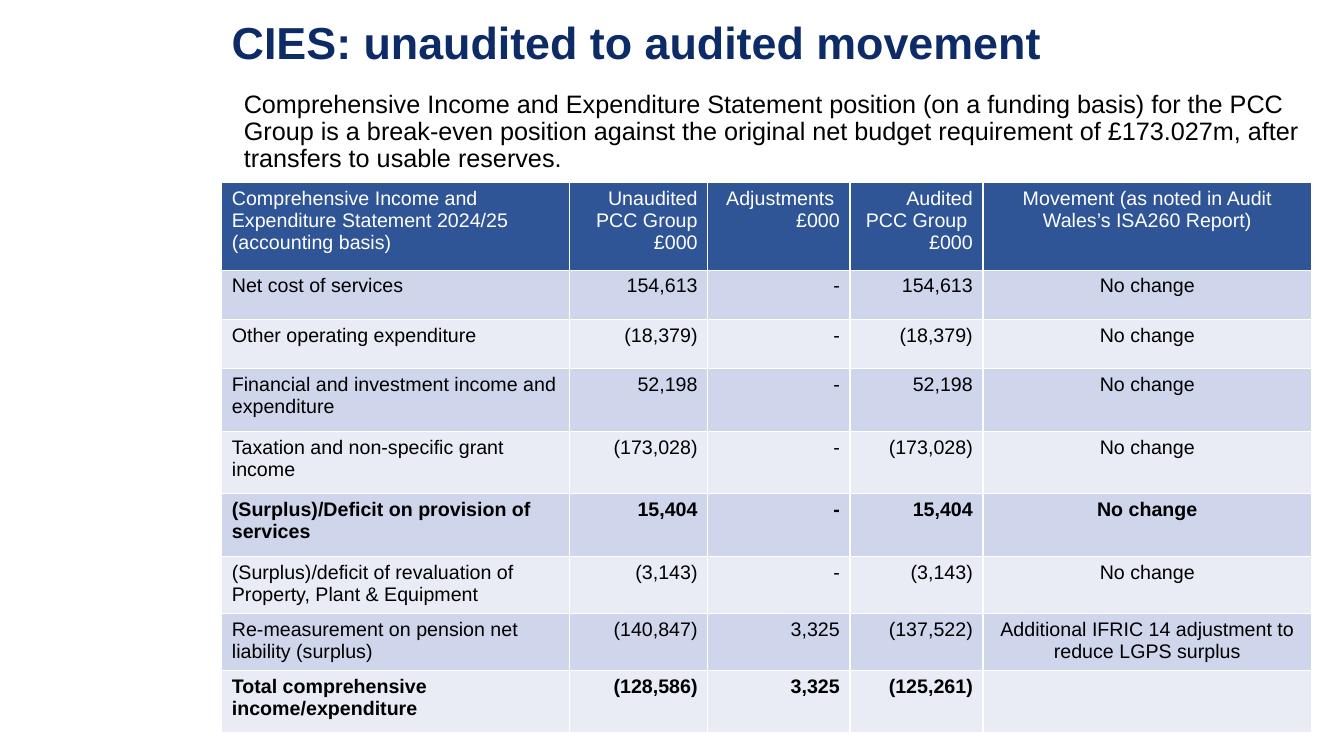
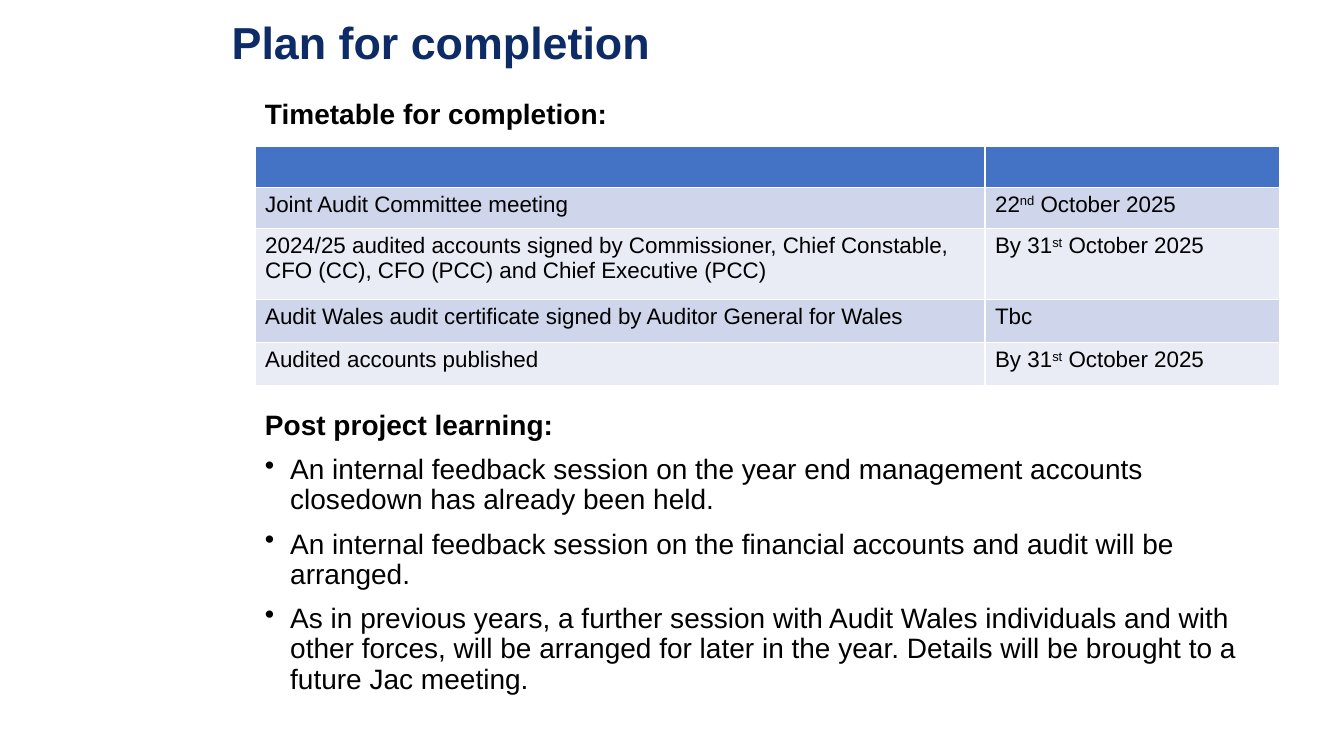
import itertools
from dataclasses import dataclass

import pptx
import pptx.dml.color
import pptx.enum.text
import pptx.oxml.ns
import pptx.util
from lxml import etree

Inches = pptx.util.Inches
Align = pptx.enum.text.PP_ALIGN
Anchor = pptx.enum.text.MSO_ANCHOR


@dataclass(frozen=True)
class Theme:
    font: str = "Arial"
    navy: str = "0D2B67"
    black: str = "000000"
    white: str = "FFFFFF"
    dark_header: str = "2F5597"
    bright_header: str = "4472C4"
    bands: tuple = ("CFD5EA", "E9EBF5")
    title_size: int = 32
    body_size: int = 20
    intro_size: int = 18
    schedule_size: int = 16
    figures_size: int = 14


THEME = Theme()
TITLE_BOX = (2.2, 0.13, 11.03, 0.64)

MOVEMENT_HEADER = (
    "Comprehensive Income and Expenditure Statement 2024/25\n(accounting basis)",
    "Unaudited PCC Group\n£000",
    "Adjustments \n£000",
    "Audited PCC Group \n£000",
    "Movement (as noted in Audit Wales’s ISA260 Report)",
)
MOVEMENT_ROWS = (
    ("Net cost of services", "154,613", "-", "154,613", "No change"),
    ("Other operating expenditure", "(18,379)", "-", "(18,379)", "No change"),
    ("Financial and investment income and expenditure", "52,198", "-", "52,198", "No change"),
    ("Taxation and non-specific grant income", "(173,028)", "-", "(173,028)", "No change"),
    ("(Surplus)/Deficit on provision of services", "15,404", "-", "15,404", "No change"),
    ("(Surplus)/deficit of revaluation of Property, Plant & Equipment",
     "(3,143)", "-", "(3,143)", "No change"),
    ("Re-measurement on pension net liability (surplus)", "(140,847)", "3,325", "(137,522)",
     "Additional IFRIC 14 adjustment to reduce LGPS surplus"),
    ("Total comprehensive income/expenditure", "(128,586)", "3,325", "(125,261)", ""),
)
SCHEDULE_ROWS = (
    ("Joint Audit Committee meeting", "22^nd^ October 2025"),
    ("2024/25 audited accounts signed by Commissioner, Chief Constable, "
     "CFO (CC), CFO (PCC) and Chief Executive (PCC)", "By 31^st^ October 2025"),
    ("Audit Wales audit certificate signed by Auditor General for Wales", "Tbc"),
    ("Audited accounts published", "By 31^st^ October 2025"),
)
LEARNING_POINTS = (
    "An internal feedback session on the year end management accounts closedown "
    "has already been held.",
    "An internal feedback session on the financial accounts and audit will be arranged.",
    "As in previous years, a further session with Audit Wales individuals and with other "
    "forces, will be arranged for later in the year. Details will be brought to a future "
    "Jac meeting.",
)


def rgb(value):
    return pptx.dml.color.RGBColor.from_string(value)


def write(frame, text, size, color=THEME.black, bold=False, align=Align.LEFT,
          line_spacing=None, space_before=0, indent=0, bullet=False):
    """Append one paragraph per line of text; ^marks^ enclose superscript."""
    for line in text.split("\n"):
        first = frame.paragraphs[0]
        is_first = not first.runs
        para = first if is_first else frame.add_paragraph()
        properties = para._p.get_or_add_pPr()
        if indent:
            properties.set("marL", str(Inches(indent)))
        if bullet:
            properties.set("indent", str(-Inches(indent)))
            mark = etree.SubElement(properties, pptx.oxml.ns.qn("a:buChar"))
            mark.set("char", "•")
        para.alignment = align
        if line_spacing:
            para.line_spacing = line_spacing
        para.space_before = pptx.util.Pt(0 if is_first else space_before)
        for position, part in enumerate(line.split("^")):
            span = para.add_run()
            span.text = part
            span.font.name = THEME.font
            span.font.size = pptx.util.Pt(size)
            span.font.bold = bold
            span.font.color.rgb = rgb(color)
            if position % 2:
                span._r.get_or_add_rPr().set("baseline", "30000")


def add_text_frame(page, box, anchor=Anchor.TOP):
    frame = page.shapes.add_textbox(*map(Inches, box)).text_frame
    frame.word_wrap = True
    frame.vertical_anchor = anchor
    return frame


def add_page(deck, title):
    page = deck.slides.add_slide(deck.slide_layouts[6])
    frame = add_text_frame(page, TITLE_BOX, Anchor.MIDDLE)
    write(frame, title, THEME.title_size, color=THEME.navy, bold=True, line_spacing=0.9)
    return page


def add_banded_table(page, left, top, widths, heights, rows, header_fill, size,
                     alignments, bold_rows=()):
    """Draw rows under a coloured header; the table style supplies white rules."""
    box = map(Inches, (left, top, sum(widths), sum(heights)))
    table = page.shapes.add_table(len(heights), len(widths), *box).table
    for column, width in zip(table.columns, widths):
        column.width = Inches(width)
    for row, height in zip(table.rows, heights):
        row.height = Inches(height)
    fills = itertools.chain([header_fill], itertools.cycle(THEME.bands))
    for index, (texts, fill) in enumerate(zip(rows, fills)):
        for column, (text, align) in enumerate(zip(texts, alignments)):
            cell = table.cell(index, column)
            cell.fill.solid()
            cell.fill.fore_color.rgb = rgb(fill)
            if text:
                write(cell.text_frame, text, size, align=align, bold=index in bold_rows,
                      color=THEME.black if index else THEME.white)


def add_movement_page(deck):
    page = add_page(deck, "CIES: unaudited to audited movement")
    intro = add_text_frame(page, (2.13, 0.86, 11.03, 0.94))
    write(intro, "Comprehensive Income and Expenditure Statement position (on a funding basis) "
          "for the PCC Group is a break-even position against the original net budget "
          "requirement of £173.027m, after transfers to usable reserves.",
          THEME.intro_size, line_spacing=0.9, indent=0.19)
    add_banded_table(
        page, 2.2, 1.81,
        widths=(3.45, 1.37, 1.41, 1.32, 3.26),
        heights=(0.87, 0.49, 0.49, 0.62, 0.62, 0.62, 0.53, 0.53, 0.62),
        rows=(MOVEMENT_HEADER, *MOVEMENT_ROWS),
        header_fill=THEME.dark_header, size=THEME.figures_size,
        alignments=(Align.LEFT, *[Align.RIGHT] * 3, Align.CENTER), bold_rows=(5, 8))


def add_completion_page(deck):
    page = add_page(deck, "Plan for completion")
    left, width = 2.53, 10.16
    body = {"size": THEME.body_size, "line_spacing": 0.9, "space_before": 10}

    timetable = add_text_frame(page, (left, 0.95, width, 0.45))
    write(timetable, "Timetable for completion:", bold=True, **body)
    add_banded_table(
        page, left, 1.45, widths=(7.24, 2.92), heights=(0.41, 0.41, 0.7, 0.43, 0.43),
        rows=(("", ""), *SCHEDULE_ROWS), header_fill=THEME.bright_header,
        size=THEME.schedule_size, alignments=(Align.LEFT, Align.LEFT))

    learning = add_text_frame(page, (left, 4.03, width, 2.9))
    write(learning, "Post project learning:", bold=True, **body)
    for point in LEARNING_POINTS:
        write(learning, point, indent=0.25, bullet=True, **body)


def main():
    deck = pptx.Presentation()
    deck.slide_width, deck.slide_height = Inches(13.33), Inches(7.5)
    add_movement_page(deck)
    add_completion_page(deck)
    deck.save("out.pptx")


if __name__ == "__main__":
    main()
